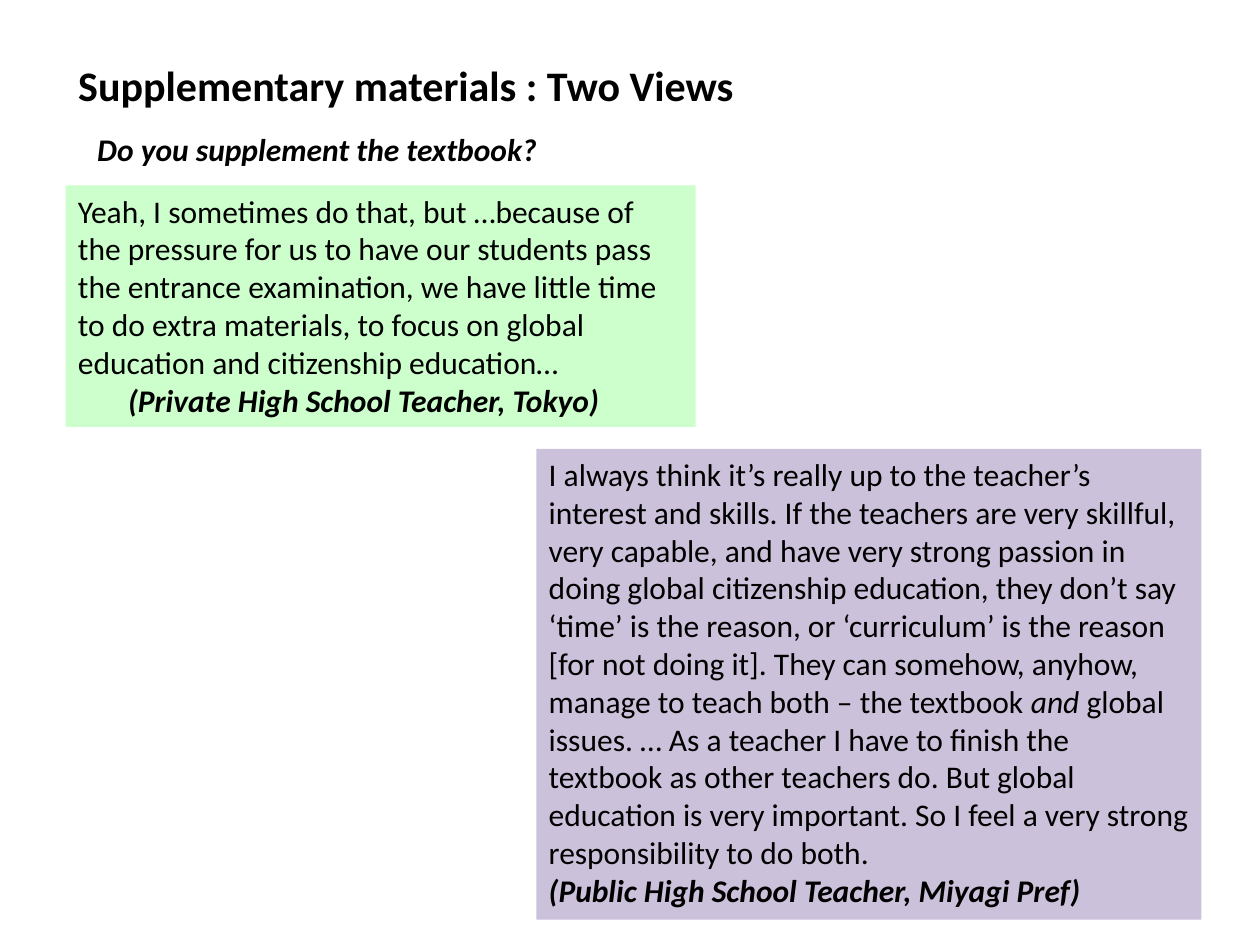
from pptx import Presentation
from pptx.dml.color import RGBColor as RGB
from pptx.enum.shapes import MSO_SHAPE as Kind
from pptx.enum.text import MSO_ANCHOR as Anchor, MSO_AUTO_SIZE as Fit, PP_ALIGN as Align
from pptx.util import Pt

# Content: each run is (text, style), style letters b = bold, i = italic
TITLE = "Supplementary materials : Two Views"
ASK = "Do you supplement the textbook?"
VIEWS = [
    dict(
        box=(37.5, 106, 360, 138), fill="green", indent=28.6,
        quote=[("Yeah, I sometimes do that, but …because of the pressure for us to have "
                "our students pass the entrance examination, we have little time to do "
                "extra materials, to focus on global education and citizenship "
                "education…", "")],
        who="(Private High School Teacher, Tokyo)"),
    dict(
        box=(306.5, 256.5, 380, 269), fill="violet", indent=0,
        quote=[("I always think it’s really up to the teacher’s interest and skills. If "
                "the teachers are very skillful, very capable, and have very strong "
                "passion in doing global citizenship education, they don’t say ‘time’ is "
                "the reason, or ‘curriculum’ is the reason [for not doing it]. They can "
                "somehow, anyhow, manage to teach both – the textbook ", ""),
               ("and", "i"),
               (" global issues. … As a teacher I have to finish the textbook as other "
                "teachers do. But global education is very important. So I feel a very "
                "strong responsibility to do both.", "")],
        who="(Public High School Teacher, Miyagi Pref)"),
]

THEME = dict(font="Calibri", ink=RGB(0, 0, 0), head=24, body=18,
             green=RGB(0xCC, 0xFF, 0xCC), violet=RGB(0xCC, 0xC1, 0xDA))


def put(shape, paras, size=THEME["body"], wrap=True, indent=0):
    """Fill a shape with paragraphs of runs; indent applies to the last one."""
    frame = shape.text_frame
    frame.word_wrap = wrap
    frame.auto_size = Fit.NONE
    frame.vertical_anchor = Anchor.TOP
    for n, runs in enumerate(paras):
        para = frame.add_paragraph() if n else frame.paragraphs[0]
        para.alignment = Align.LEFT
        for text, style in runs:
            run = para.add_run()
            run.text = text
            font = run.font
            font.name, font.size = THEME["font"], Pt(size)
            font.bold, font.italic = "b" in style, "i" in style
            font.color.rgb = THEME["ink"]
    if indent:
        para._p.get_or_add_pPr().set("marL", str(Pt(indent)))


def place(box):
    return [Pt(v) for v in box]


deck = Presentation()
deck.slide_width, deck.slide_height = Pt(720), Pt(540)
slide = deck.slides.add_slide(deck.slide_layouts[5])

# Title and question
title = slide.shapes.title
title.left, title.top, title.width, title.height = place((37.5, 30.5, 394.5, 36))
put(title, [[(TITLE, "b")]], size=THEME["head"], wrap=False)
ask = slide.shapes.add_textbox(*place((48.5, 71, 272, 29)))
put(ask, [[(ASK, "bi")]], wrap=False)

# Two quoted views
for view in VIEWS:
    card = slide.shapes.add_shape(Kind.RECTANGLE, *place(view["box"]))
    card.shadow.inherit = False
    card.fill.solid()
    card.fill.fore_color.rgb = THEME[view["fill"]]
    card.line.fill.background()
    put(card, [view["quote"], [(view["who"], "bi")]], indent=view["indent"])

deck.save("out.pptx")
